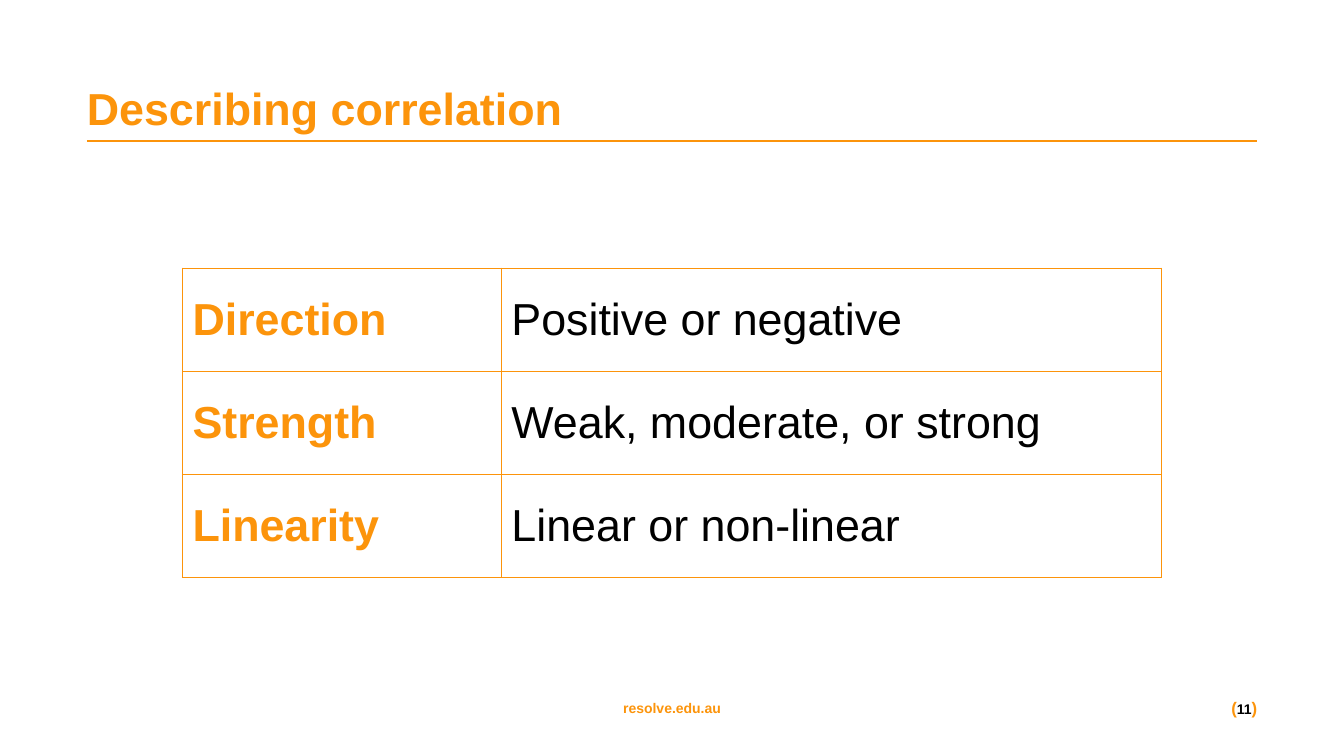
from lxml import etree
from pptx import Presentation
from pptx.dml.color import RGBColor
from pptx.enum import shapes, text
from pptx.oxml.ns import qn
from pptx.util import Pt

ORANGE = RGBColor(0xFC, 0x94, 0x0B)
BLACK = RGBColor(0, 0, 0)
WHITE = RGBColor(0xFF, 0xFF, 0xFF)

PROPERTIES = [
    ("Direction", "Positive or negative"),
    ("Strength", "Weak, moderate, or strong"),
    ("Linearity", "Linear or non-linear"),
]


def add_run(p, words, size, color=ORANGE, bold=True):
    r = p.add_run()
    r.text = words
    for name, value in dict(name="Arial", size=Pt(size), bold=bold).items():
        setattr(r.font, name, value)
    r.font.color.rgb = color


def format_frame(tf, align):
    """Give a text frame no margins, middle anchor and the alignment."""
    values = dict(margin_left=0, margin_top=0, margin_right=0, margin_bottom=0,
                  word_wrap=True, auto_size=text.MSO_AUTO_SIZE.NONE,
                  vertical_anchor=text.MSO_ANCHOR.MIDDLE)
    for name, value in values.items():
        setattr(tf, name, value)
    tf.paragraphs[0].alignment = align
    return tf.paragraphs[0]


def add_title(s, x, y, w, h):
    """Fill the title placeholder and rule a line below it."""
    sp = s.shapes.title
    for name, value in dict(left=x, top=y, width=w, height=h).items():
        setattr(sp, name, Pt(value))
    p = format_frame(sp.text_frame, text.PP_ALIGN.LEFT)
    add_run(p, "Describing correlation", 32)

    rule_y = Pt(y + h + 2.8)
    rule = s.shapes.add_connector(shapes.MSO_CONNECTOR.STRAIGHT,
                                  Pt(x), rule_y, Pt(x + w), rule_y)
    rule.line.color.rgb = ORANGE
    rule.line.width = Pt(1.5)
    etree.SubElement(rule._element.spPr, qn("a:effectLst"))


def add_borders(cell):
    tc_pr = cell._tc.get_or_add_tcPr()
    for i, side in enumerate(("lnL", "lnR", "lnT", "lnB")):
        ln = etree.Element(qn(f"a:{side}"), w=str(Pt(0.75)))
        fill = etree.SubElement(ln, qn("a:solidFill"))
        etree.SubElement(fill, qn("a:srgbClr"), val=str(ORANGE))
        tc_pr.insert(i, ln)


def add_properties(s, x, y, w, h):
    sp = s.shapes.add_table(len(PROPERTIES), 2, Pt(x), Pt(y), Pt(w), Pt(h))
    table = sp.table
    table.first_row = table.horz_banding = False
    name_w = 227.8
    for column, width in zip(table.columns, (name_w, w - name_w)):
        column.width = Pt(width)
    for i, row in enumerate(PROPERTIES):
        for j, words in enumerate(row):
            cell = table.cell(i, j)
            cell.fill.solid()
            cell.fill.fore_color.rgb = WHITE
            cell.vertical_anchor = text.MSO_ANCHOR.MIDDLE
            add_run(cell.text_frame.paragraphs[0], words, 32,
                    BLACK if j else ORANGE, bold=j == 0)
            add_borders(cell)


def add_footer(s, x, y, w, h):
    """Centre the site name in the box and put the page number at its right."""
    site_w, number_w = 332.6, 57
    site = s.shapes.add_textbox(Pt(x + (w - site_w) / 2), Pt(y), Pt(site_w), Pt(h))
    add_run(format_frame(site.text_frame, text.PP_ALIGN.CENTER),
            "resolve.edu.au", 10)

    number = s.shapes.add_textbox(Pt(x + w - number_w), Pt(y), Pt(number_w), Pt(h))
    p = format_frame(number.text_frame, text.PP_ALIGN.RIGHT)
    for words, size, color in (("(", 12, ORANGE), ("11", 10, BLACK), (")", 12, ORANGE)):
        add_run(p, words, size, color)


def main():
    prs = Presentation()
    prs.slide_width, prs.slide_height = Pt(960), Pt(540)
    s = prs.slides.add_slide(prs.slide_layouts[5])
    s.background.fill.solid()
    s.background.fill.fore_color.rgb = WHITE
    add_title(s, 62, 56, 836, 42)
    add_properties(s, 130.3, 191.5, 699, 221)
    add_footer(s, 62, 493.2, 836, 24.5)
    prs.save("out.pptx")


if __name__ == "__main__":
    main()
